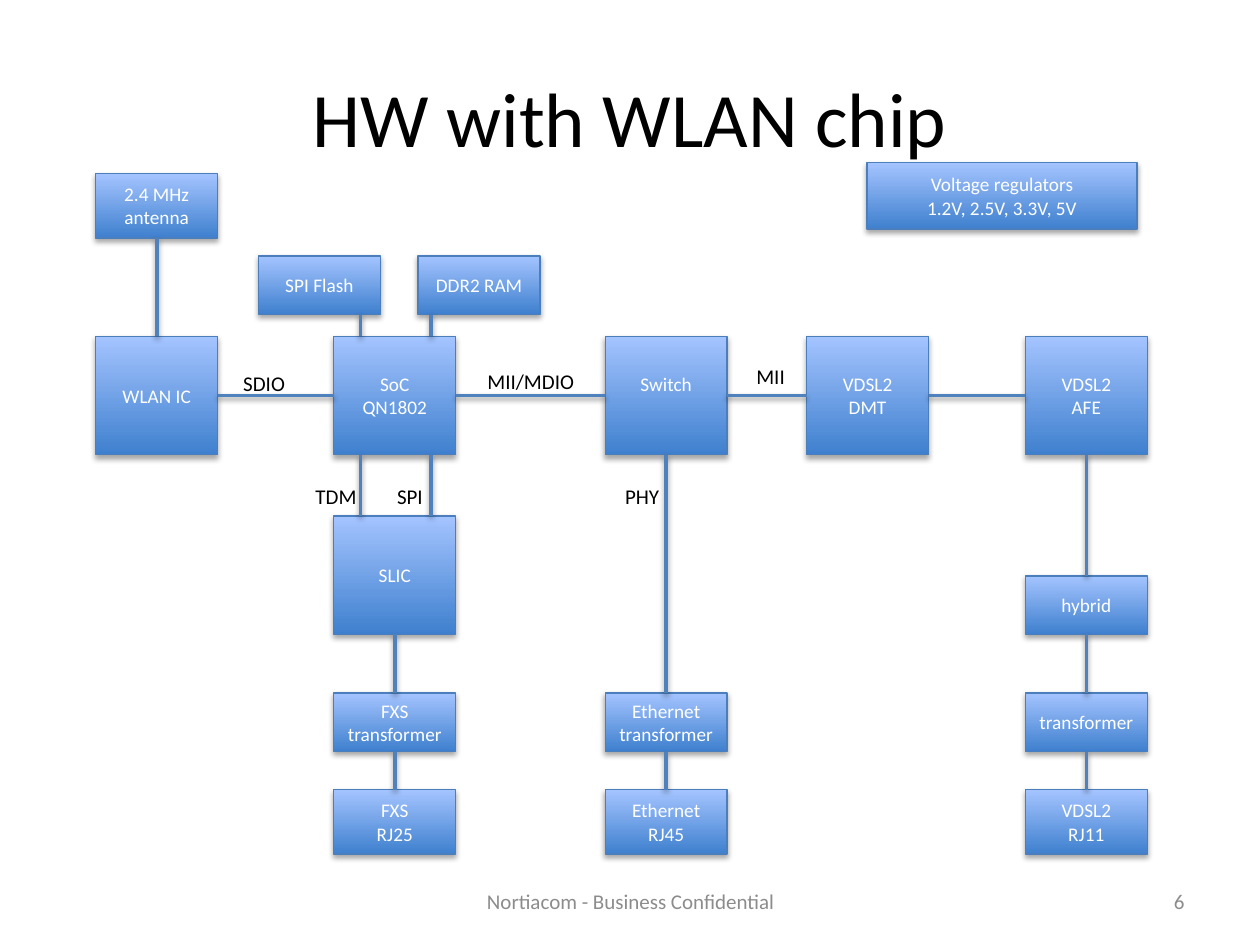
from typing import NamedTuple

from lxml import etree
from pptx import Presentation
from pptx import util as u
from pptx.dml.color import RGBColor
from pptx.enum import shapes, text
from pptx.oxml import ns

FONT = "Calibri"
BLACK = RGBColor(0x00, 0x00, 0x00)
WHITE = RGBColor(0xFF, 0xFF, 0xFF)
GREY = RGBColor(0x8C, 0x8C, 0x8C)
BOX_BOTTOM = RGBColor(0x3F, 0x80, 0xCE)
BOX_TOP = RGBColor(0xA4, 0xC4, 0xFF)
BOX_EDGE = RGBColor(0x4B, 0x7E, 0xBC)
WIRE = RGBColor(0x4F, 0x81, 0xBD)

# Grid in centimetres: columns, rows and box heights
WLAN_X, SOC_X, SWITCH_X, DMT_X, AFE_X = 1.93, 6.73, 12.2, 16.26, 20.67
CHIP_Y, TRAFO_Y, JACK_Y = 6.78, 13.97, 15.92
BOX_W, CHIP_H, PART_H, JACK_H = 2.46, 2.39, 1.18, 1.3
TOP, LEFT, BOTTOM, RIGHT = range(4)


class Block(NamedTuple):
    label: str
    left: float
    top: float
    height: float
    width: float = BOX_W
    raise_text: float = 0


class Link(NamedTuple):
    start: str
    start_side: int
    end: str
    end_side: int


class Label(NamedTuple):
    label: str
    left: float
    top: float
    width: float = 1.45
    height: float = 0.77
    color: RGBColor = BLACK
    align: text.PP_ALIGN = text.PP_ALIGN.CENTER
    anchor: text.MSO_ANCHOR = text.MSO_ANCHOR.TOP


BLOCKS = {
    "antenna": Block("2.4 MHz\nantenna", WLAN_X, 3.5, JACK_H),
    "wlan": Block("WLAN IC", WLAN_X, CHIP_Y, CHIP_H),
    "flash": Block("SPI Flash", 5.21, 5.16, PART_H),
    "ram": Block("DDR2 RAM", 8.43, 5.16, PART_H),
    "soc": Block("SoC\nQN1802", SOC_X, CHIP_Y, CHIP_H),
    "slic": Block("SLIC", SOC_X, 10.4, CHIP_H),
    "fxs": Block("FXS\ntransformer", SOC_X, TRAFO_Y, PART_H),
    "rj25": Block("FXS\nRJ25", SOC_X, JACK_Y, JACK_H),
    "switch": Block("Switch", SWITCH_X, CHIP_Y, CHIP_H, raise_text=0.47),
    "ethernet": Block("Ethernet transformer", SWITCH_X, TRAFO_Y, PART_H),
    "rj45": Block("Ethernet\nRJ45", SWITCH_X, JACK_Y, JACK_H),
    "dmt": Block("VDSL2\nDMT", DMT_X, CHIP_Y, CHIP_H),
    "afe": Block("VDSL2\nAFE", AFE_X, CHIP_Y, CHIP_H),
    "hybrid": Block("hybrid", AFE_X, 11.61, PART_H),
    "transformer": Block("transformer", AFE_X, TRAFO_Y, PART_H),
    "rj11": Block("VDSL2\nRJ11", AFE_X, JACK_Y, JACK_H),
    "regulators": Block("Voltage regulators\n1.2V, 2.5V, 3.3V, 5V", 17.48, 3.28, 1.34, 5.44),
}
ROW = ["wlan", "soc", "switch", "dmt", "afe"]
COLUMNS = [
    ["antenna", "wlan"],
    ["slic", "fxs", "rj25"],
    ["switch", "ethernet", "rj45"],
    ["afe", "hybrid", "transformer", "rj11"],
]
# Parallel buses above and below the SoC: x positions and y spans
BUS_X = [7.27, 8.69]
BUS_SPANS = [(6.34, CHIP_Y), (CHIP_Y + CHIP_H, 10.4)]

LABELS = [
    Label("SDIO", 4.6, 7.34),
    Label("MII/MDIO", 9.2, 7.31, 3),
    Label("MII", 14.81, 7.21),
    Label("TDM", 6.05, 9.63),
    Label("SPI", 7.54, 9.63),
    Label("PHY", 12.22, 9.63),
    Label("Nortiacom - Business Confidential", 8.69, 17.65, 8.05, 1.02, GREY,
          anchor=text.MSO_ANCHOR.MIDDLE),
    Label("6", 18.21, 17.65, 5.92, 1.02, GREY, text.PP_ALIGN.RIGHT,
          text.MSO_ANCHOR.MIDDLE),
]


def format_text(frame, size: float, color: RGBColor, align=text.PP_ALIGN.CENTER) -> None:
    for para in frame.paragraphs:
        para.alignment = align
        for span in para.runs:
            span.font.name = FONT
            span.font.size = u.Pt(size)
            span.font.color.rgb = color


def add_shadow(item, distance: int, opacity: int) -> None:
    effects = etree.SubElement(item._element.spPr, ns.qn("a:effectLst"))
    shadow = etree.SubElement(effects, ns.qn("a:outerShdw"), blurRad="40000",
                              dist=str(distance), dir="5400000", rotWithShape="0")
    color = etree.SubElement(shadow, ns.qn("a:srgbClr"), val="000000")
    etree.SubElement(color, ns.qn("a:alpha"), val=str(opacity * 1000))


def add_block(page, block: Block):
    box = page.shapes.add_shape(
        shapes.MSO_SHAPE.RECTANGLE, u.Cm(block.left), u.Cm(block.top),
        u.Cm(block.width), u.Cm(block.height))
    box.fill.gradient()
    box.fill.gradient_angle = 90
    for stop, color in zip(box.fill.gradient_stops, (BOX_BOTTOM, BOX_TOP)):
        stop.color.rgb = color
    box.line.color.rgb = BOX_EDGE
    box.line.width = u.Pt(0.75)
    add_shadow(box, 23000, 35)
    frame = box.text_frame
    frame.word_wrap = True
    frame.vertical_anchor = text.MSO_ANCHOR.MIDDLE
    frame.margin_bottom = u.Cm(0.13 + block.raise_text)
    frame.text = block.label
    format_text(frame, 11, WHITE)
    return box


def add_wire(page, x1: float = 0, y1: float = 0, x2: float = 0, y2: float = 0):
    wire = page.shapes.add_connector(
        shapes.MSO_CONNECTOR.STRAIGHT, u.Cm(x1), u.Cm(y1), u.Cm(x2), u.Cm(y2))
    wire.line.color.rgb = WIRE
    wire.line.width = u.Pt(2)
    add_shadow(wire, 20000, 38)
    return wire


def add_link(page, boxes: dict, link: Link) -> None:
    wire = add_wire(page)
    wire.begin_connect(boxes[link.start], link.start_side)
    wire.end_connect(boxes[link.end], link.end_side)


def add_label(page, label: Label) -> None:
    box = page.shapes.add_textbox(u.Cm(label.left), u.Cm(label.top),
                                  u.Cm(label.width), u.Cm(label.height))
    frame = box.text_frame
    frame.word_wrap = True
    frame.vertical_anchor = label.anchor
    frame.text = label.label
    format_text(frame, 12, label.color, label.align)


def main() -> None:
    deck = Presentation()
    deck.slide_width, deck.slide_height = u.Cm(25.4), u.Cm(19.05)
    page = deck.slides.add_slide(deck.slide_layouts[5])

    # Title
    title = page.shapes.title
    title.left, title.top = u.Cm(1.27), u.Cm(0.76)
    title.width, title.height = u.Cm(22.86), u.Cm(3.18)
    title.text_frame.text = "HW with WLAN chip"
    title.text_frame.vertical_anchor = text.MSO_ANCHOR.MIDDLE
    format_text(title.text_frame, 44, BLACK)

    # Blocks
    boxes = {name: add_block(page, block) for name, block in BLOCKS.items()}

    # Links along the main row and down each column
    links = [Link(a, RIGHT, b, LEFT) for a, b in zip(ROW, ROW[1:])]
    for column in COLUMNS:
        links += [Link(a, BOTTOM, b, TOP) for a, b in zip(column, column[1:])]
    for link in links:
        add_link(page, boxes, link)

    # Buses around the SoC
    for x in BUS_X:
        for start, end in BUS_SPANS:
            add_wire(page, x, start, x, end)

    # Bus names, footer and page number
    for label in LABELS:
        add_label(page, label)

    deck.save("out.pptx")


if __name__ == "__main__":
    main()
